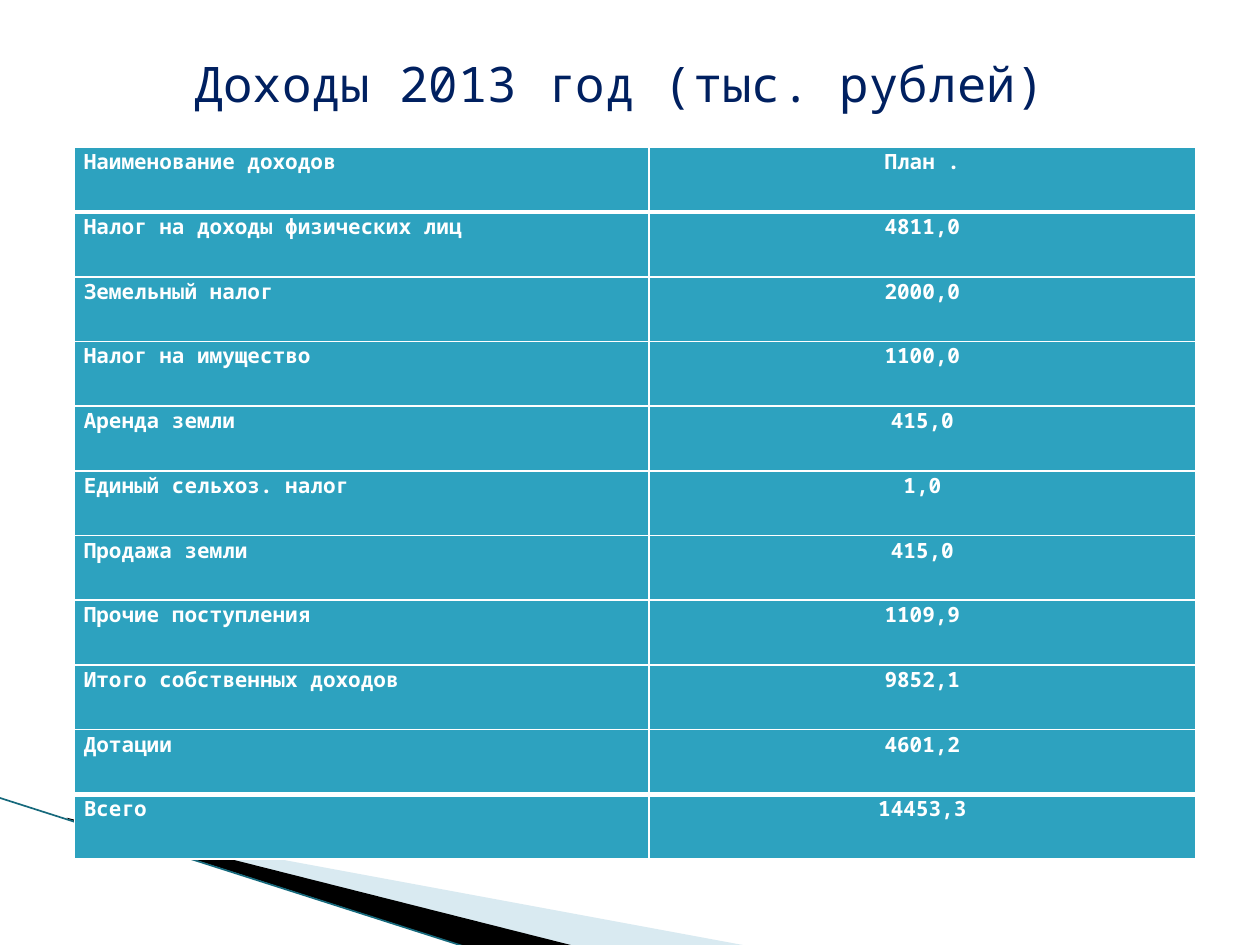
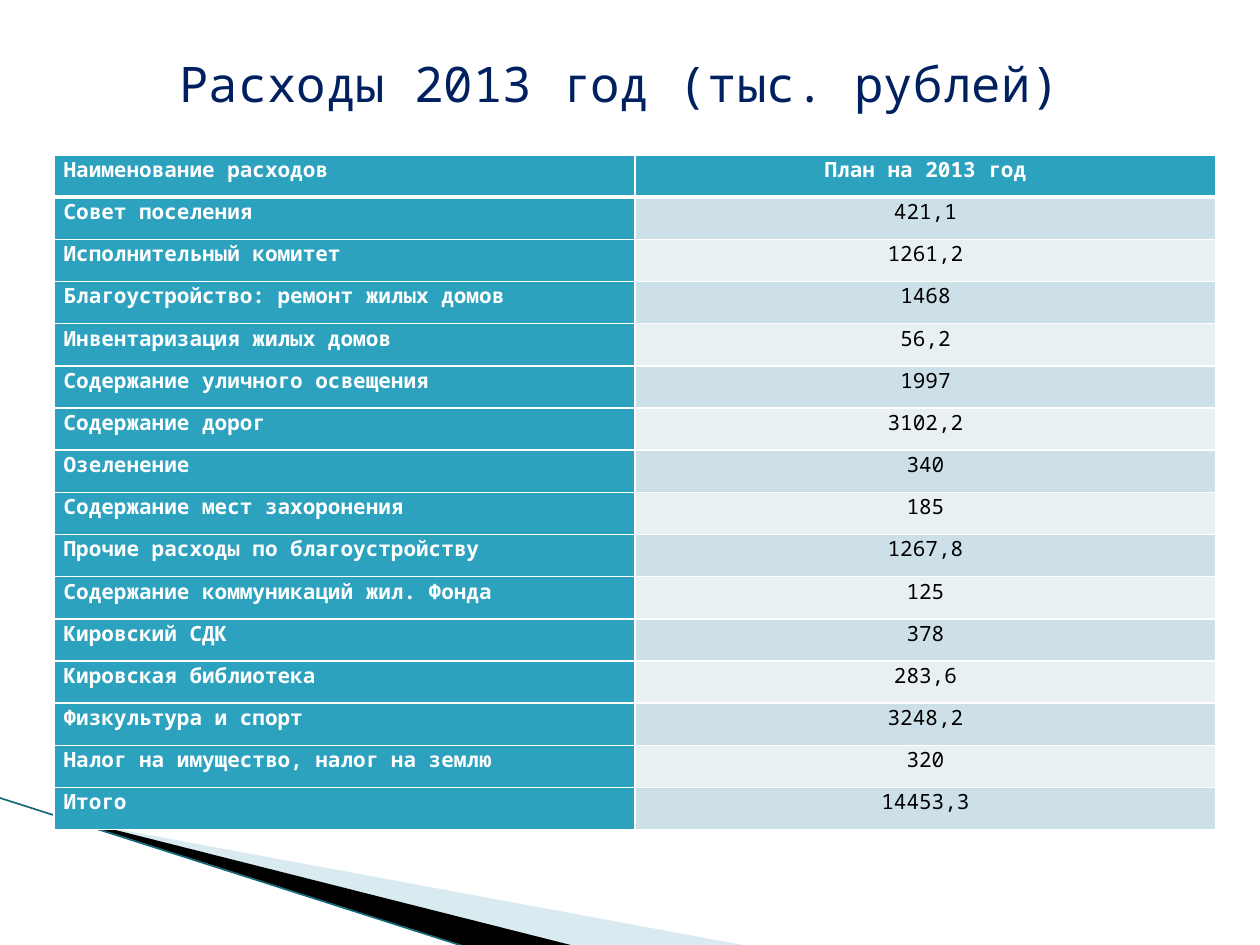
from dataclasses import dataclass

from lxml.etree import SubElement
from pptx import Presentation
from pptx.dml.color import RGBColor
from pptx.enum.shapes import MSO_CONNECTOR as Connector
from pptx.enum.text import MSO_ANCHOR as Anchor, MSO_AUTO_SIZE as AutoSize, PP_ALIGN as Align
from pptx.oxml.ns import qn
from pptx.shapes.autoshape import Shape
from pptx.slide import Slide
from pptx.table import _Cell as Cell
from pptx.text.text import TextFrame
from pptx.util import Inches, Pt

FONT = "Noto Sans Mono"
COLORS = {
    "title": "002060",
    "accent": "2DA2BF",
    "band_dark": "CDE0E8",
    "band_light": "E8F0F4",
    "wedge": "A0CBDC",
    "curve": "16697C",
    "white": "FFFFFF",
    "black": "000000",
}


@dataclass
class Wedge:
    frame: tuple[float, float, float, float]
    points: list[tuple[float, float]]
    color: str
    opacity: int = 100


@dataclass
class BudgetTable:
    title: str
    left: float
    top: float
    height: float
    widths: tuple[float, float]
    rows: list[tuple[str, str]]
    name_align: Align
    banded: bool = False
    total_rule: bool = False


WEDGES = [
    Wedge((0.78, 5.47, 4.16, 1.58),
          [(0.55, 6.51), (5.95, 7.51), (4.56, 7.51), (0.55, 6.5)], "wedge", 40),
    Wedge((-0.06, 6.33, 4.16, 0.92),
          [(0.53, 6.49), (4.57, 7.51), (3.72, 7.52), (0.54, 6.5)], "black"),
]

INCOME = BudgetTable(
    "Доходы 2013 год (тыс. рублей)", 0.59, 1.17, 5.65, (4.56, 4.34),
    [
        ("Наименование доходов", "План ."),
        ("Налог на доходы физических лиц", "4811,0"),
        ("Земельный налог", "2000,0"),
        ("Налог на имущество", "1100,0"),
        ("Аренда земли", "415,0"),
        ("Единый сельхоз. налог", "1,0"),
        ("Продажа земли", "415,0"),
        ("Прочие поступления", "1109,9"),
        ("Итого собственных доходов", "9852,1"),
        ("Дотации", "4601,2"),
        ("Всего", "14453,3"),
    ],
    Align.LEFT, total_rule=True,
)

EXPENSES = BudgetTable(
    "Расходы 2013 год (тыс. рублей)", 0.43, 1.23, 5.36, (4.61, 4.61),
    [
        ("Наименование расходов", "План на 2013 год"),
        ("Совет поселения", "421,1"),
        ("Исполнительный комитет", "1261,2"),
        ("Благоустройство: ремонт жилых домов", "1468"),
        ("Инвентаризация жилых домов", "56,2"),
        ("Содержание уличного освещения", "1997"),
        ("Содержание дорог", "3102,2"),
        ("Озеленение", "340"),
        ("Содержание мест захоронения", "185"),
        ("Прочие расходы по благоустройству", "1267,8"),
        ("Содержание коммуникаций жил. Фонда", "125"),
        ("Кировский СДК", "378"),
        ("Кировская библиотека", "283,6"),
        ("Физкультура и спорт", "3248,2"),
        ("Налог на имущество, налог на землю", "320"),
        ("Итого", "14453,3"),
    ],
    Align.JUSTIFY, banded=True,
)


def rgb(name: str) -> RGBColor:
    return RGBColor.from_string(COLORS[name])


def write(tf: TextFrame, text: str, size: int, color: str, align: Align, bold: bool = False) -> None:
    tf.text = text
    p = tf.paragraphs[0]
    p.alignment = align
    r = p.runs[0]
    r.font.name, r.font.size, r.font.bold = FONT, Pt(size), bold
    r.font.color.rgb = rgb(color)


def reframe(sp: Shape, frame: tuple[float, float, float, float]) -> None:
    """Give a freeform another frame while its outline stays in place."""
    left, top, width, height = (Inches(v) for v in frame)
    dx, dy = sp.left - left, sp.top - top
    for outline in sp._element.iter(qn("a:path")):
        outline.set("w", str(width))
        outline.set("h", str(height))
        for pt in outline.iter(qn("a:pt")):
            pt.set("x", str(int(pt.get("x")) + dx))
            pt.set("y", str(int(pt.get("y")) + dy))
    sp.left, sp.top, sp.width, sp.height = left, top, width, height


def draw_corner(s: Slide) -> None:
    """Wedges and a thin line in the lower left corner."""
    for wedge in WEDGES:
        start, *rest = [(Inches(x), Inches(y)) for x, y in wedge.points]
        builder = s.shapes.build_freeform(*start)
        builder.add_line_segments(rest)
        sp = builder.convert_to_shape()
        reframe(sp, wedge.frame)
        sp.shadow.inherit = False
        sp.line.fill.background()
        sp.fill.solid()
        sp.fill.fore_color.rgb = rgb(wedge.color)
        if wedge.opacity < 100:
            color = sp.fill._xPr.find(qn("a:solidFill"))[0]
            SubElement(color, qn("a:alpha"), val=str(wedge.opacity * 1000))
    line = s.shapes.add_connector(
        Connector.STRAIGHT, Inches(-0.01), Inches(6.33), Inches(3.71), Inches(7.52))
    line.line.color.rgb = rgb("curve")
    line.line.width = Pt(0.95)
    SubElement(line._element.spPr, qn("a:effectLst"))


def draw_title(s: Slide, text: str) -> None:
    title = s.shapes.title
    title.left, title.top = Inches(0.67), Inches(0.37)
    title.width, title.height = Inches(8.5), Inches(0.57)
    tf = title.text_frame
    tf.word_wrap, tf.auto_size = True, AutoSize.NONE
    tf.vertical_anchor = Anchor.MIDDLE
    write(tf, text, 28, "title", Align.CENTER)


def set_borders(cell: Cell, top: int, bottom: int) -> None:
    """White rules; call before filling the cell, as the schema orders them."""
    tc_pr = cell._tc.get_or_add_tcPr()
    for side, width in zip("LRTB", (1, 1, top, bottom)):
        ln = SubElement(tc_pr, qn(f"a:ln{side}"), w=str(Pt(width)))
        fill = SubElement(ln, qn("a:solidFill"))
        SubElement(fill, qn("a:srgbClr"), val=COLORS["white"])


def draw_table(s: Slide, budget: BudgetTable) -> None:
    count = len(budget.rows)
    table = s.shapes.add_table(
        count, 2, Inches(budget.left), Inches(budget.top),
        Inches(sum(budget.widths)), Inches(budget.height)).table
    table.horz_banding = False
    for column, width in zip(table.columns, budget.widths):
        column.width = Inches(width)

    # Rows beside a thick rule share it, so both sides get the same width
    thick_rules = {1, count - 1} if budget.total_rule else {1}
    for i, row in enumerate(budget.rows):
        for j, text in enumerate(row):
            cell = table.cell(i, j)
            cell.margin_left = cell.margin_right = Pt(5.4)
            cell.margin_top = cell.margin_bottom = 0
            set_borders(cell, 3 if i in thick_rules else 1, 3 if i + 1 in thick_rules else 1)
            plain = budget.banded and i > 0 and j == 1
            band = "band_dark" if i % 2 else "band_light"
            cell.fill.solid()
            cell.fill.fore_color.rgb = rgb(band if plain else "accent")
            write(cell.text_frame, text, 12, "black" if plain else "white",
                  Align.CENTER if j else budget.name_align, bold=not plain)


def main() -> None:
    prs = Presentation()
    prs.slide_width, prs.slide_height = Inches(10), Inches(7.5)
    for budget in (INCOME, EXPENSES):
        s = prs.slides.add_slide(prs.slide_layouts[5])
        draw_corner(s)
        draw_title(s, budget.title)
        draw_table(s, budget)
    prs.save("out.pptx")


if __name__ == "__main__":
    main()
